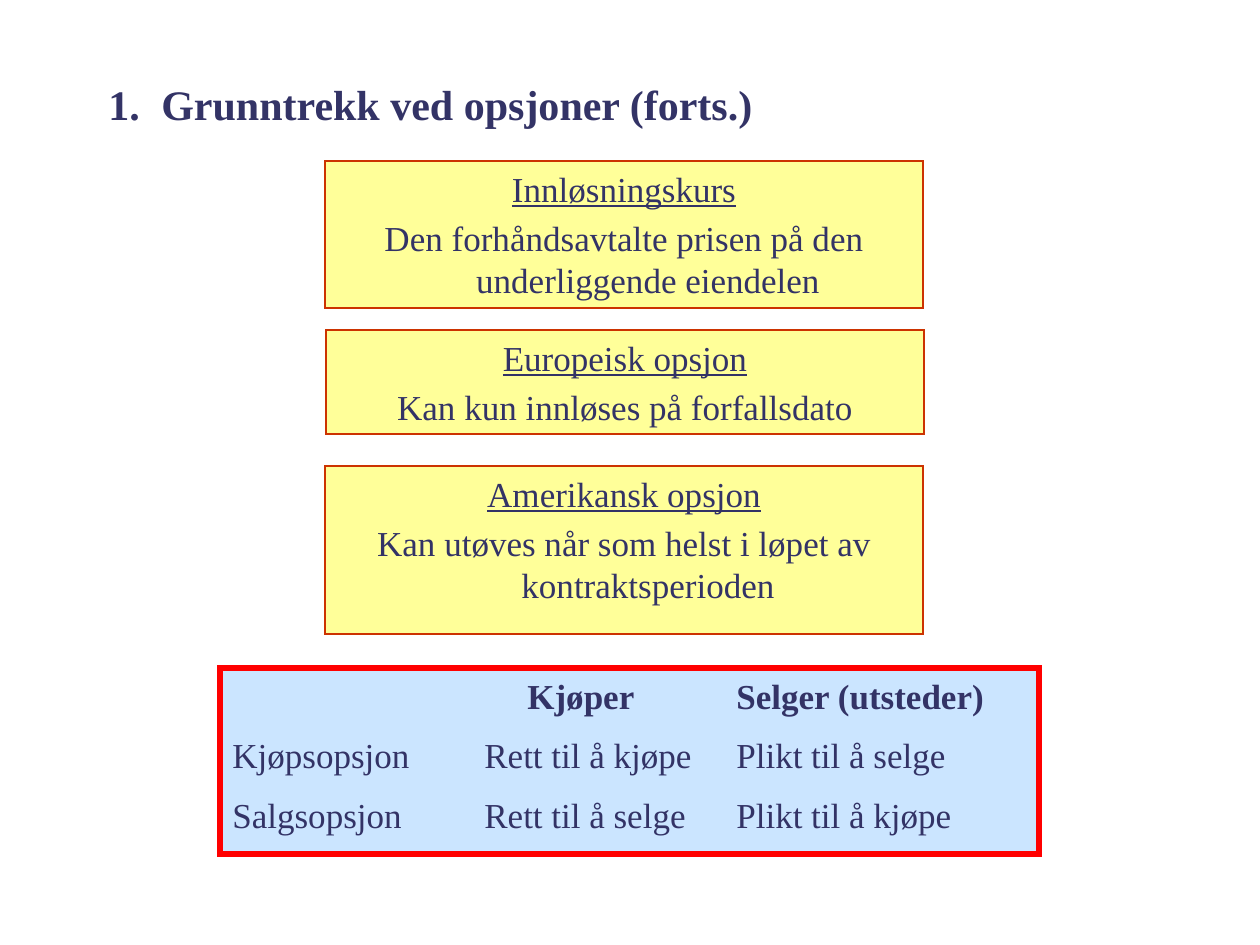
from lxml.etree import SubElement
from pptx import Presentation
from pptx.dml.color import RGBColor
from pptx.enum.shapes import MSO_SHAPE
from pptx.enum.text import MSO_ANCHOR, PP_ALIGN
from pptx.oxml.ns import qn
from pptx.util import Pt

SCALE = 914400 / 126
COLORS = {"ink": "333366", "note": "FFFF99", "rim": "CC3300",
          "sky": "99CCFF", "red": "FF0000"}


def px(num):
    """Turn px into EMU."""
    return round(num * SCALE)


def tint(name):
    """Look up a colour by name."""
    return RGBColor.from_string(COLORS[name])


def write(frame, text, size=20, bold=False, line=False, align=PP_ALIGN.LEFT,
          hang=0, gap=0, tabs=()):
    """Add one paragraph of text in the given format."""
    first = not frame.text
    para = frame.paragraphs[0] if first else frame.add_paragraph()
    para.alignment = align
    if not first:
        para.space_before = Pt(gap)
    props = para._p.get_or_add_pPr()
    if hang:
        props.set("marL", str(px(hang)))
        props.set("indent", str(-px(hang)))
    if tabs:
        stops = SubElement(props, qn("a:tabLst"))
        for stop in tabs:
            SubElement(stops, qn("a:tab"), pos=str(px(stop)), algn="l")
    run = para.add_run()
    run.text = text
    font = run.font
    font.name, font.size = "Times New Roman", Pt(size)
    font.bold, font.underline = bold, line
    font.color.rgb = tint("ink")


def panel(slide, box, fill, rim, width):
    """Draw a framed box with sharp corners and return it."""
    shape = slide.shapes.add_shape(MSO_SHAPE.RECTANGLE, *map(px, box))
    shape.shadow.inherit = False
    shape.fill.solid()
    shape.fill.fore_color.rgb = tint(fill)
    shape.line.color.rgb = tint(rim)
    shape.line.width = Pt(width)
    SubElement(shape.line._get_or_add_ln(), qn("a:miter"), lim="800000")
    shape.text_frame.word_wrap = True
    shape.text_frame.vertical_anchor = MSO_ANCHOR.TOP
    return shape


def title(slide, box, text):
    """Place the slide heading."""
    frame = slide.shapes.add_textbox(*map(px, box)).text_frame
    frame.word_wrap = True
    frame.vertical_anchor = MSO_ANCHOR.MIDDLE
    write(frame, text, size=24, bold=True, hang=53)


def term(slide, box, name, text):
    """Place a term with its meaning."""
    frame = panel(slide, box, "note", "rim", 1).text_frame
    for part, line in ((name, True), (text, False)):
        write(frame, part, line=line, align=PP_ALIGN.CENTER, hang=48, gap=4)


def rights(slide, box, head, rows):
    """Place the overview of rights and duties in tabbed columns."""
    shape = panel(slide, box, "sky", "red", 3)
    color = shape.fill._xPr.find(qn("a:solidFill"))[0]
    SubElement(color, qn("a:alpha"), val="50000")
    write(shape.text_frame, "\t".join(head), bold=True, tabs=(295, 504))
    for row in rows:
        write(shape.text_frame, "\t".join(row), gap=10, tabs=(252, 504))


def main():
    """Build and save the slide."""
    deck = Presentation()
    deck.slide_width, deck.slide_height = px(1260), px(945)
    slide = deck.slides.add_slide(deck.slide_layouts[6])
    terms = (
        (325, 161, 147, "Innløsningskurs",
         "Den forhåndsavtalte prisen på den underliggende eiendelen"),
        (326, 330, 104, "Europeisk opsjon",
         "Kan kun innløses på forfallsdato"),
        (325, 466, 168, "Amerikansk opsjon",
         "Kan utøves når som helst i løpet av kontraktsperioden"),
    )
    for left, top, high, name, text in terms:
        term(slide, (left, top, 598, high), name, text)
    rights(slide, (220, 668, 819, 186), ("", "Kjøper", "Selger (utsteder)"),
           (("Kjøpsopsjon", "Rett til å kjøpe", "Plikt til å selge"),
            ("Salgsopsjon", "Rett til å selge", "Plikt til å kjøpe")))
    title(slide, (96, 46, 1220, 116), "1.\tGrunntrekk ved opsjoner (forts.)")
    deck.save("out.pptx")


if __name__ == "__main__":
    main()
